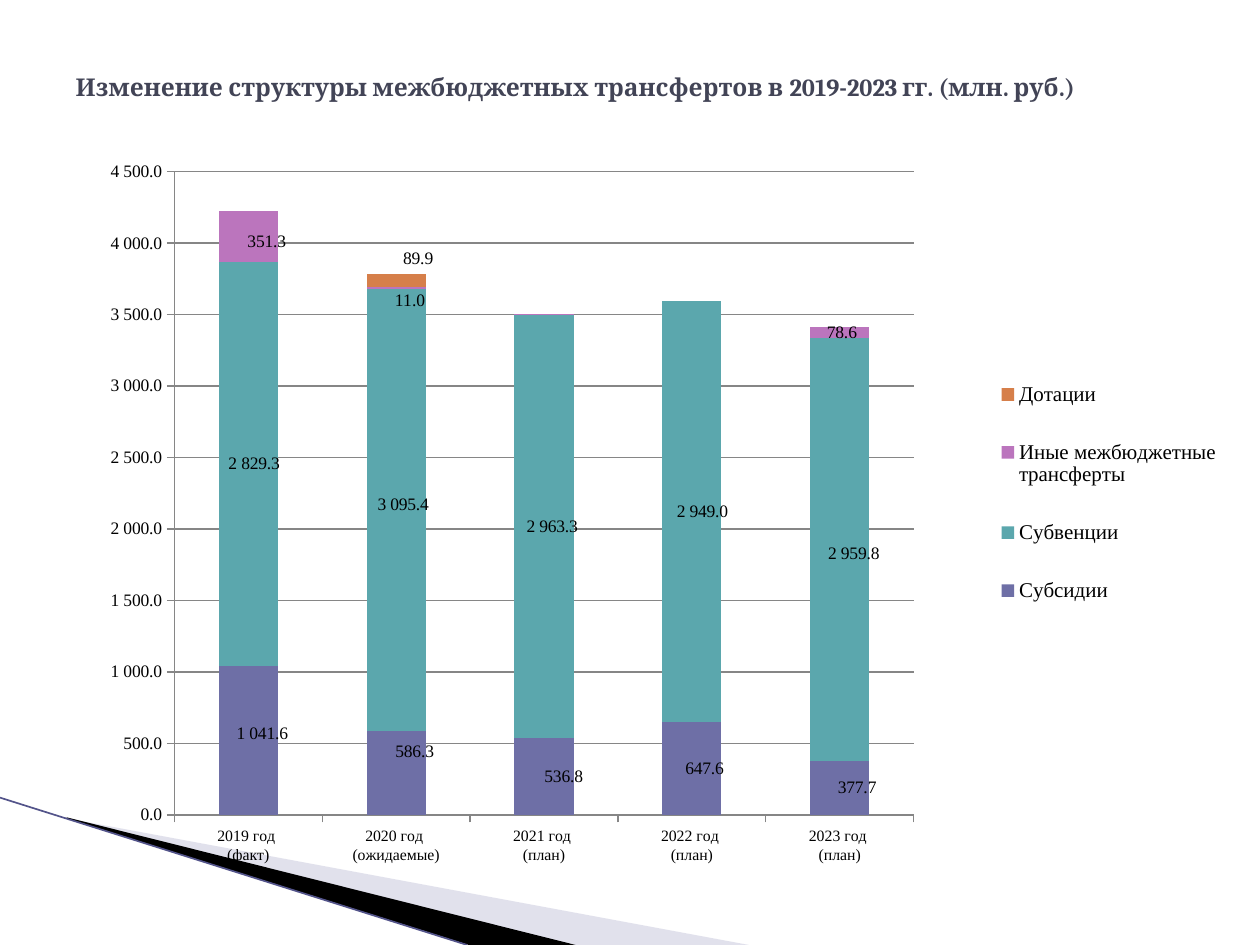
import pptx
import pptx.util
import pptx.chart.data
import pptx.dml.color
import pptx.enum.chart
import pptx.enum.shapes
import pptx.enum.text
import pptx.oxml
import pptx.oxml.ns
from dataclasses import dataclass

Pt = pptx.util.Pt
enums = pptx.enum.chart


@dataclass(frozen=True)
class Theme:
    ink: str = "424456"
    text: str = "000000"
    pale: str = "B6B6D1"
    edge: str = "53548A"
    grid: str = "868686"
    serif: str = "Times New Roman"
    head: str = "Cambria"
    title: int = 14
    legend: int = 12
    label: int = 10
    small: int = 9


THEME = Theme()
FORMAT = "#\\ ##0.0"
YEARS = ["2019 год \n(факт)", "2020 год \n(ожидаемые)", "2021 год \n(план)",
         "2022 год \n(план)", "2023 год \n(план)"]
SERIES = [
    ("Субсидии", "6E6FA6", [1041.6, 586.3, 536.8, 647.6, 377.7],
     {0: (0.012, -0.01), 1: (0.014, -0.03), 2: (0.015, 0),
      3: (0.009, 0), 4: (0.013, 0)}),
    ("Субвенции", "5BA7AD", [2829.3, 3095.4, 2963.3, 2949, 2959.8],
     {0: (0.005, 0), 1: (0.006, -0.007), 2: (0.007, 0),
      3: (0.009, 0), 4: (0.012, 0.006)}),
    ("Иные межбюджетные трансферты", "BB75BD", [351.3, 11, 0.7, 0, 78.6],
     {0: (0.014, 0.007), 1: (0.01, 0.018), 4: (0, 0)}),
    ("Дотации", "D67F4A", [None, 89.9, None, None, None],
     {1: (0.017, -0.03)}),
]


def color(code):
    return pptx.dml.color.RGBColor.from_string(code)


def style(font, size, name=THEME.serif, code=THEME.text, bold=False):
    font.size = Pt(size)
    font.name = name
    font.bold = bold
    font.color.rgb = color(code)


def node(tag, inner="", value=None):
    attr = "" if value is None else f' val="{value}"'
    space = pptx.oxml.ns.nsdecls("a", "c")
    return pptx.oxml.parse_xml(f"<{tag} {space}{attr}>{inner}</{tag}>")


def layout(**parts):
    inner = "".join(f'<c:{key} val="{val}"/>' for key, val in parts.items())
    return node("c:layout", f"<c:manualLayout>{inner}</c:manualLayout>")


def wedge(slide, points, code, alpha=None):
    build = slide.shapes.build_freeform(*points[0], scale=Pt(1))
    build.add_line_segments(points[1:], close=True)
    shape = build.convert_to_shape()
    shape.shadow.inherit = False
    shape.fill.solid()
    shape.fill.fore_color.rgb = color(code)
    shape.line.fill.background()
    if alpha is not None:
        fill = shape._element.spPr.find(pptx.oxml.ns.qn("a:solidFill"))
        fill[0].append(node("a:alpha", value=alpha * 1000))


def line(slide, start, end, code, width):
    link = slide.shapes.add_connector(
        pptx.enum.shapes.MSO_CONNECTOR.STRAIGHT,
        *map(Pt, start), *map(Pt, end))
    link.line.color.rgb = color(code)
    link.line.width = Pt(width)
    link._element.spPr.append(node("a:effectLst"))


def title(slide, text):
    box = slide.shapes.title
    box.left, box.top, box.width, box.height = map(Pt, (36, 21.6, 648, 55.4))
    frame = box.text_frame
    frame.word_wrap = True
    frame.vertical_anchor = pptx.enum.text.MSO_ANCHOR.MIDDLE
    para = frame.paragraphs[0]
    para.alignment = pptx.enum.text.PP_ALIGN.LEFT
    run = para.add_run()
    run.text = text
    style(run.font, THEME.title, THEME.head, THEME.ink, True)


def label(series, index, shift):
    mark = series.points[index].data_label
    style(mark.font, THEME.label)
    mark.position = enums.XL_LABEL_POSITION.CENTER
    item = series._element.xpath(f"c:dLbls/c:dLbl[c:idx/@val='{index}']")[0]
    form = node("c:numFmt")
    form.set("formatCode", FORMAT)
    form.set("sourceLinked", "0")
    item[0].addnext(form)
    item[0].addnext(layout(x=shift[0], y=shift[1]))


def axis(part, size):
    style(part.tick_labels.font, size)
    part.major_tick_mark = enums.XL_TICK_MARK.OUTSIDE
    part.minor_tick_mark = enums.XL_TICK_MARK.NONE
    part.format.line.color.rgb = color(THEME.grid)


def chart(slide):
    data = pptx.chart.data.CategoryChartData(number_format=FORMAT)
    data.categories = YEARS
    for name, _, vals, _ in SERIES:
        data.add_series(name, vals)
    graph = slide.shapes.add_chart(
        enums.XL_CHART_TYPE.COLUMN_STACKED,
        *map(Pt, (36, 82.8, 669.6, 414)), data).chart
    style(graph.font, THEME.label)
    graph.has_title = False

    plot = graph.plots[0]
    plot.gap_width = 150
    plot.overlap = 100
    plot.vary_by_categories = False
    for series, (_, code, _, shifts) in zip(plot.series, SERIES):
        series.format.fill.solid()
        series.format.fill.fore_color.rgb = color(code)
        series.data_labels.show_value = False
        for index, shift in shifts.items():
            label(series, index, shift)

    axis(graph.category_axis, THEME.small)
    value = graph.value_axis
    axis(value, THEME.label)
    value.minimum_scale = 0
    value.maximum_scale = 4500
    value.major_unit = 500
    value.tick_labels.number_format = FORMAT
    value.tick_labels.number_format_is_linked = False
    value.has_major_gridlines = True
    value.major_gridlines.format.line.color.rgb = color(THEME.grid)

    graph.has_legend = True
    key = graph.legend
    key.position = enums.XL_LEGEND_POSITION.RIGHT
    key.include_in_layout = False
    style(key.font, THEME.legend)
    for old in key._element.xpath("c:layout"):
        key._element.remove(old)
    key._element.xpath("c:legendPos")[0].addnext(layout(
        xMode="edge", yMode="edge", x=0.79, y=0.28, w=0.205, h=0.4))
    area = graph._chartSpace.xpath("c:chart/c:plotArea")[0]
    for old in area.xpath("c:layout"):
        area.remove(old)
    area.insert(0, layout(layoutTarget="inner", xMode="edge", yMode="edge",
                          x=0.095, y=0.037, w=0.631, h=0.888))


def main():
    deck = pptx.Presentation()
    deck.slide_width, deck.slide_height = Pt(720), Pt(540)
    slide = deck.slides.add_slide(deck.slide_layouts[5])
    wedge(slide, [(39.6, 468.5), (428.4, 540), (328.3, 540), (39.6, 468)],
          THEME.pale, 40)
    wedge(slide, [(38.2, 467.3), (329, 540), (267.8, 540), (38.9, 468)],
          THEME.text)
    line(slide, (0, 455.8), (267, 540), THEME.edge, 0.95)
    chart(slide)
    title(slide, "Изменение структуры межбюджетных трансфертов "
                 "в 2019-2023 гг. (млн. руб.)")
    deck.save("out.pptx")


if __name__ == "__main__":
    main()
